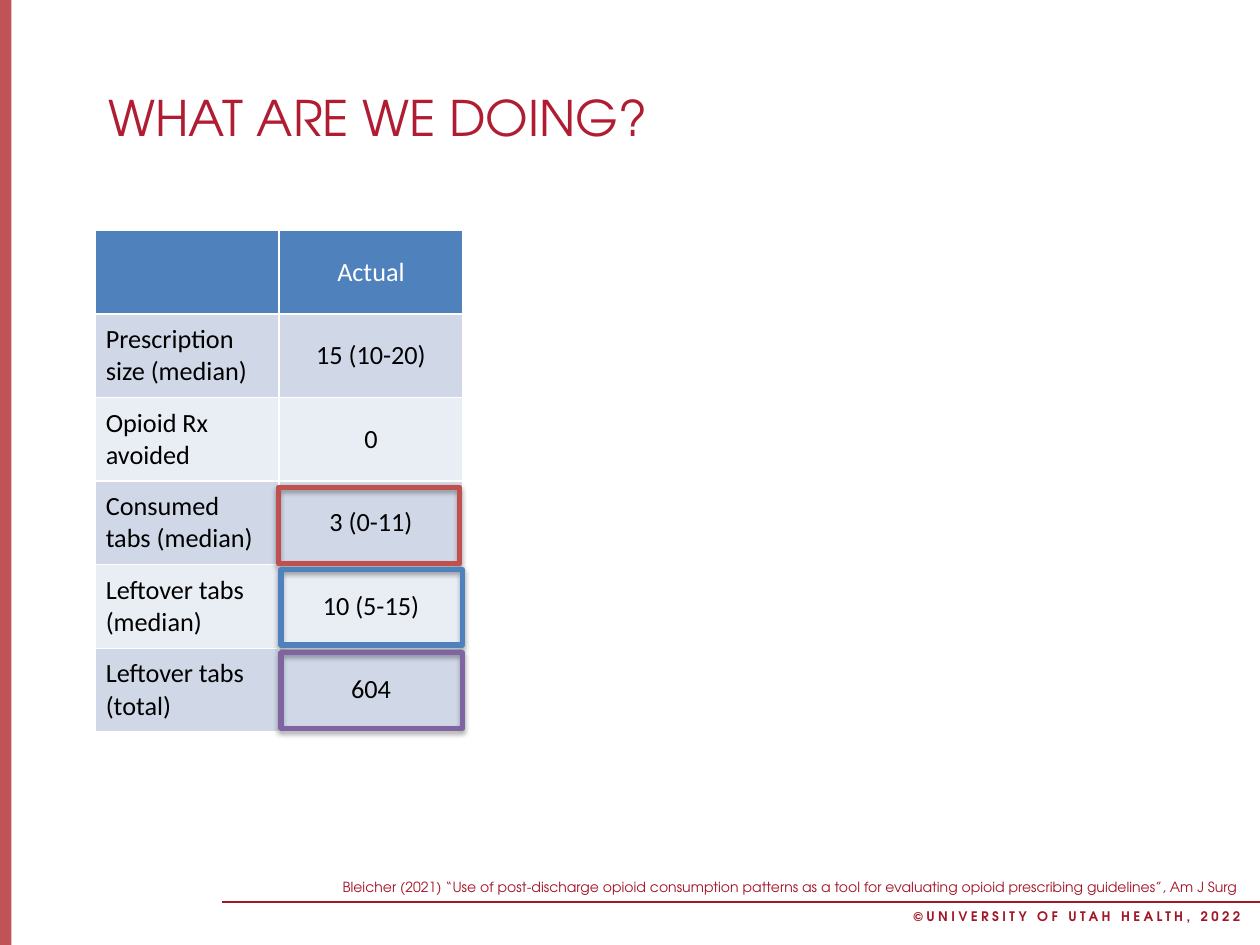
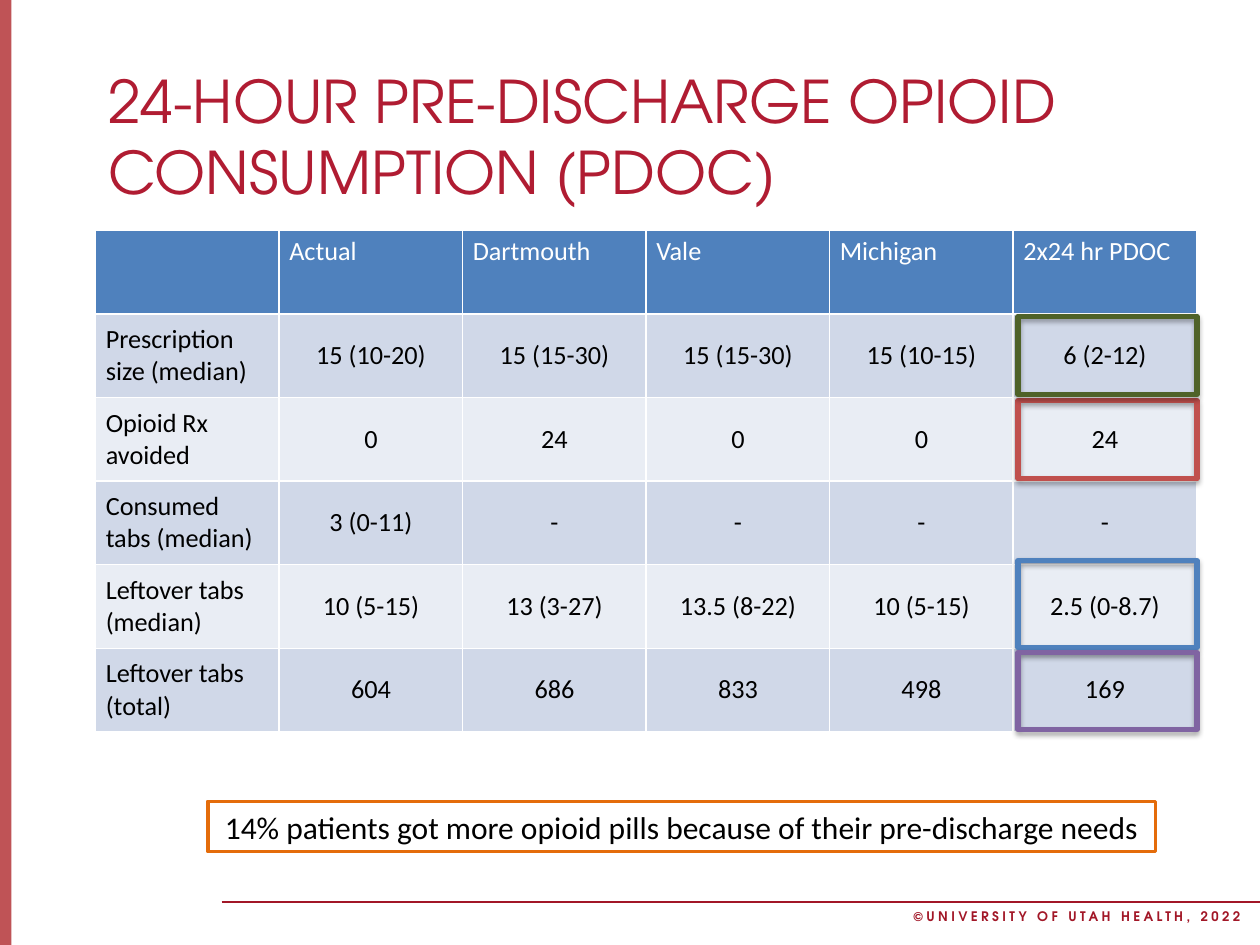
from dataclasses import dataclass
from lxml.etree import SubElement
from pptx import Presentation
from pptx.dml.color import RGBColor
from pptx.enum.shapes import MSO_CONNECTOR, MSO_SHAPE
from pptx.enum.text import MSO_ANCHOR, MSO_AUTO_SIZE, PP_ALIGN
from pptx.oxml.ns import qn
from pptx.util import Inches, Pt


@dataclass(frozen=True)
class Theme:
    head: str = "TeX Gyre Adventor"
    body: str = "Calibri"
    title: str = "B01C32"
    bar: str = "AF282C"
    rule: str = "A21727"
    cite: str = "A31527"
    blue: str = "4F81BD"
    red: str = "C0504D"
    plum: str = "8064A2"
    green: str = "4F6228"
    amber: str = "E46C0A"
    bands: tuple = ("D0D8E8", "E9EDF4")
    white: str = "FFFFFF"
    black: str = "000000"
    foot_size: float = 7.5
    cite_size: float = 8
    cell_size: float = 15
    note_size: float = 18


T = Theme()
FOOT = "©UNIVERSITY OF UTAH HEALTH, 2022"
CITE = ("Bleicher (2021) “Use of post-discharge opioid consumption patterns as a tool "
        "for evaluating opioid prescribing guidelines”, Am J Surg")
NOTE = "14% patients got more opioid pills because of their pre-discharge needs"
ROWS = [
    ["", "Actual", "Dartmouth", "Vale", "Michigan", "2x24 hr PDOC"],
    ["Prescription size (median)", "15 (10-20)", "15 (15-30)", "15 (15-30)", "15 (10-15)", "6 (2-12)"],
    ["Opioid Rx avoided", "0", "24", "0", "0", "24"],
    ["Consumed tabs (median)", "3 (0-11)", "-", "-", "-", "-"],
    ["Leftover tabs\n(median)", "10 (5-15)", "13 (3-27)", "13.5 (8-22)", "10 (5-15)", "2.5 (0-8.7)"],
    ["Leftover tabs (total)", "604", "686", "833", "498", "169"],
]
SLIDES = [
    dict(title="WHAT ARE WE DOING?", size=28, box=(0.76, 0.63, 8.74, 0.6),
         cols=2, center=True, cite=True, note=False,
         marks=[(2.21, 3.87, 1.44, 0.6, T.red),
                (2.23, 4.52, 1.44, 0.6, T.blue),
                (2.23, 5.18, 1.44, 0.6, T.plum)]),
    dict(title="24-HOUR PRE-DISCHARGE OPIOID CONSUMPTION (PDOC)", size=33.6,
         box=(0.76, 0.46, 8.74, 1.23),
         cols=6, center=False, cite=False, note=True,
         marks=[(8.08, 3.18, 1.42, 0.62, T.red),
                (8.08, 4.45, 1.42, 0.69, T.blue),
                (8.08, 5.18, 1.42, 0.61, T.plum),
                (8.08, 2.51, 1.42, 0.62, T.green)]),
]
LEFT, TOP, COL, ROW = 0.76, 1.83, 8.74 / 6, 3.98 / 6


def rgb(color):
    return RGBColor.from_string(color)


def inch(*nums):
    return [Inches(n) for n in nums]


def style(frame, size, color, face=T.body, bold=False, align=PP_ALIGN.LEFT):
    for para in frame.paragraphs:
        para.alignment = align
        font = para.font
        font.name, font.size, font.bold = face, Pt(size), bold
        font.color.rgb = rgb(color)


def add_text(slide, box, text, size, color, bold=False):
    frame = slide.shapes.add_textbox(*inch(*box)).text_frame
    frame.word_wrap = True
    frame.text = text
    style(frame, size, color, T.head, bold)
    return frame


def add_box(slide, box, fill=None, line=None, width=0):
    shape = slide.shapes.add_shape(MSO_SHAPE.RECTANGLE, *inch(*box))
    shape.shadow.inherit = False
    if fill:
        shape.fill.solid()
        shape.fill.fore_color.rgb = rgb(fill)
    else:
        shape.fill.background()
    if line:
        shape.line.color.rgb = rgb(line)
        shape.line.width = Pt(width)
    else:
        shape.line.fill.background()
    return shape


def add_alpha(node, share):
    SubElement(node, qn("a:alpha"), val=str(share * 1000))


def add_frame(slide):
    bar = add_box(slide, (0, 0, 0.09, 7.5), T.bar)
    add_alpha(bar.element.spPr.find(".//" + qn("a:srgbClr")), 80)
    rule = slide.shapes.add_connector(MSO_CONNECTOR.STRAIGHT, *inch(1.76, 7.16, 10, 7.16))
    rule.line.color.rgb = rgb(T.rule)
    rule.line.width = Pt(1)
    SubElement(rule.element.spPr, qn("a:effectLst"))
    foot = add_text(slide, (7.15, 7.16, 2.85, 0.23), FOOT, T.foot_size, T.rule, True)
    foot.paragraphs[0].runs[0].font._element.set("spc", "190")


def add_title(slide, text, size, box):
    title = slide.shapes.title
    title.left, title.top, title.width, title.height = inch(*box)
    frame = title.text_frame
    frame.text = text
    frame.auto_size = MSO_AUTO_SIZE.NONE
    frame.vertical_anchor = MSO_ANCHOR.MIDDLE
    style(frame, size, T.title, T.head)


def add_grid(slide, cols, center):
    size = inch(LEFT, TOP, COL * cols, ROW * len(ROWS))
    grid = slide.shapes.add_table(len(ROWS), cols, *size).table
    for col in grid.columns:
        col.width = Inches(COL)
    for r, row in enumerate(ROWS):
        grid.rows[r].height = Inches(ROW)
        for c, text in enumerate(row[:cols]):
            cell = grid.cell(r, c)
            cell.margin_left = cell.margin_right = Inches(0.08)
            cell.margin_top = cell.margin_bottom = Inches(0.04)
            cell.fill.solid()
            cell.fill.fore_color.rgb = rgb(T.bands[(r - 1) % 2] if r else T.blue)
            cell.vertical_anchor = MSO_ANCHOR.MIDDLE if r or center else MSO_ANCHOR.TOP
            cell.text = text
            mid = c and (r or center)
            style(cell.text_frame, T.cell_size, T.black if r else T.white,
                  align=PP_ALIGN.CENTER if mid else PP_ALIGN.LEFT)


def add_mark(slide, *box, color):
    mark = add_box(slide, box, line=color, width=3)
    glow = SubElement(mark.element.spPr.find(qn("a:effectLst")), qn("a:outerShdw"),
                      blurRad=str(Pt(3.1)), dist=str(Pt(1.8)), dir="5400000", rotWithShape="0")
    add_alpha(SubElement(glow, qn("a:srgbClr"), val=T.black), 35)


def add_note(slide):
    frame = add_box(slide, (1.65, 6.36, 7.52, 0.4), T.white, T.amber, 2).text_frame
    frame.word_wrap = False
    frame.vertical_anchor = MSO_ANCHOR.MIDDLE
    frame.text = NOTE
    style(frame, T.note_size, T.black, align=PP_ALIGN.CENTER)


def main():
    deck = Presentation()
    deck.slide_width, deck.slide_height = inch(10, 7.5)
    for page in SLIDES:
        slide = deck.slides.add_slide(deck.slide_layouts[5])
        add_frame(slide)
        add_title(slide, page["title"], page["size"], page["box"])
        add_grid(slide, page["cols"], page["center"])
        for *box, color in page["marks"]:
            add_mark(slide, *box, color=color)
        if page["cite"]:
            add_text(slide, (2.62, 6.92, 7.38, 0.22), CITE, T.cite_size, T.cite)
        if page["note"]:
            add_note(slide)
    deck.save("out.pptx")


if __name__ == "__main__":
    main()
